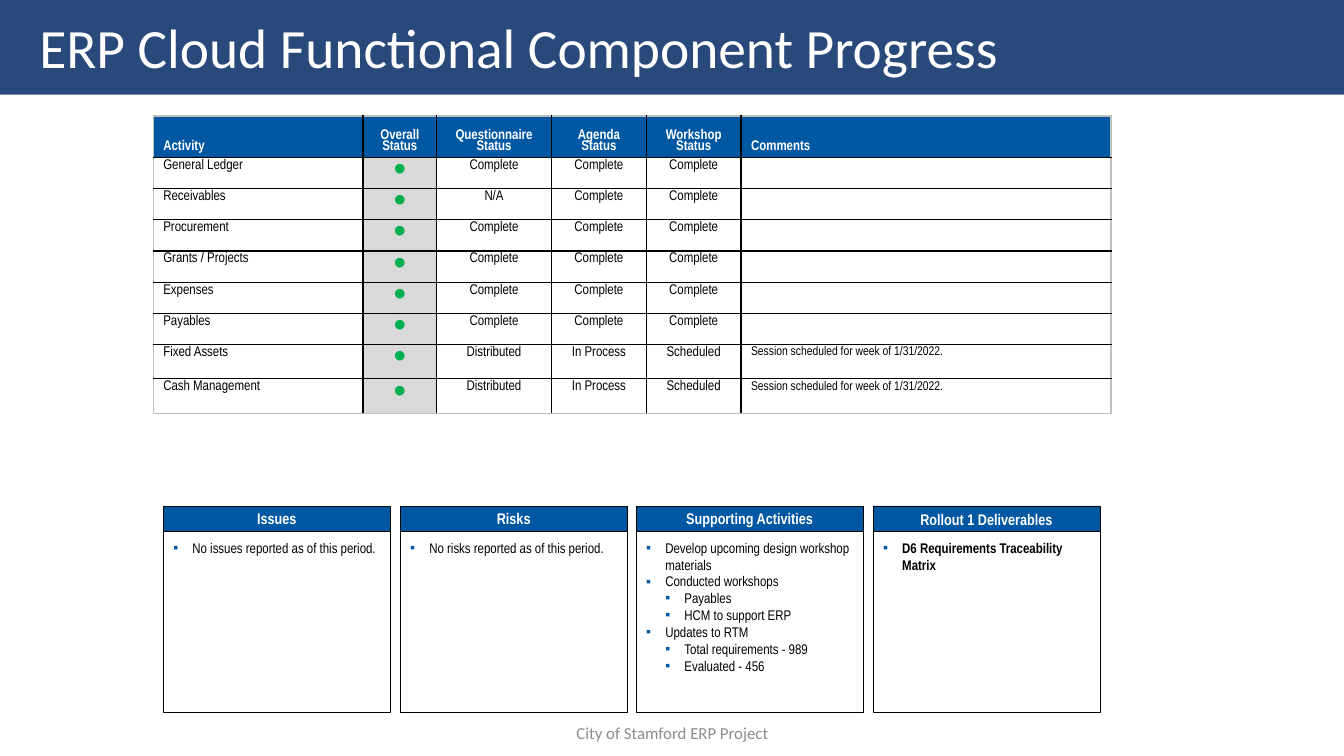
from lxml import etree
from pptx import Presentation
from pptx import util as u
from pptx.dml.color import RGBColor
from pptx.enum import shapes, text
from pptx.oxml import ns

PX = 9144
NAVY, BLUE, GREEN = "29497B", "0058A3", "00B050"
BLACK, WHITE, GREY, SILVER = "000000", "FFFFFF", "D9D9D9", "BFBFBF"
NARROW = "Arial Narrow"
LEFT, CENTER = text.PP_ALIGN.LEFT, text.PP_ALIGN.CENTER
TOP, MIDDLE, BOTTOM = text.MSO_ANCHOR.TOP, text.MSO_ANCHOR.MIDDLE, text.MSO_ANCHOR.BOTTOM

COLUMN_WIDTHS = [208, 73, 114, 94, 94, 367]
ROW_HEIGHTS = [41] + [31] * 6 + [34] * 2
HEADINGS = ["Activity", "Overall\nStatus", "Questionnaire\nStatus", "Agenda Status",
            "Workshop\nStatus", "Comments"]
DONE = ["Complete", "Complete", "Complete", ""]
PLANNED = ["Distributed", "In Process", "Scheduled", "Session scheduled for week of 1/31/2022."]
ACTIVITIES = [
    ["General Ledger", *DONE],
    ["Receivables", "N/A", *DONE[1:]],
    ["Procurement", *DONE],
    ["Grants / Projects", *DONE],
    ["Expenses", *DONE],
    ["Payables", *DONE],
    ["Fixed Assets", *PLANNED],
    ["Cash Management", *PLANNED],
]
PANELS = [
    ("Issues", 25, False, [(0, "No issues reported as of this period.")]),
    ("Risks", 25, False, [(0, "No risks reported as of this period.")]),
    ("Supporting Activities", 25, False, [
        (0, "Develop upcoming design workshop materials"),
        (0, "Conducted workshops"),
        (1, "Payables"),
        (1, "HCM to support ERP"),
        (0, "Updates to RTM"),
        (1, "Total requirements - 989"),
        (1, "Evaluated - 456"),
    ]),
    ("Rollout 1 Deliverables", 27, True, [(0, "D6 Requirements Traceability Matrix")]),
]


def px(*lengths):
    """Turn whole pixels into EMU."""
    return [u.Emu(length * PX) for length in lengths]


def color(value):
    """Turn a hex string into a colour."""
    return RGBColor.from_string(value)


def style(paragraph, size, fill, name=NARROW, bold=False, align=LEFT):
    """Set the font and alignment of a paragraph."""
    paragraph.alignment = align
    font = paragraph.font
    font.name, font.size, font.bold = name, u.Pt(size), bold
    font.color.rgb = color(fill)


def set_margins(target, horizontal, vertical):
    """Set the inner margins of a text frame or cell."""
    target.margin_left = target.margin_right = px(horizontal)[0]
    target.margin_top = target.margin_bottom = px(vertical)[0]


def add_box(slide, bounds, fill, line=None):
    """Add a flat rectangle."""
    shape = slide.shapes.add_shape(shapes.MSO_SHAPE.RECTANGLE, *px(*bounds))
    shape.shadow.inherit = False
    shape.fill.solid()
    shape.fill.fore_color.rgb = color(fill)
    if line:
        shape.line.color.rgb = color(line)
        shape.line.width = u.Pt(0.5)
    else:
        shape.line.fill.background()
    return shape


def add_title(slide, wording):
    """Place the title on its banner."""
    title = slide.shapes.title
    banner = add_box(slide, (0, 0, 1333, 94), NAVY)
    title.element.addprevious(banner.element)
    title.left, title.top, title.width, title.height = px(29, 22, 1150, 56)
    frame = title.text_frame
    frame.text = wording
    frame.auto_size = text.MSO_AUTO_SIZE.NONE
    frame.vertical_anchor = MIDDLE
    frame.paragraphs[0].line_spacing = 0.9
    style(frame.paragraphs[0], 39.6, WHITE, "Calibri")


def add_footer(slide, wording):
    """Add the centred footer line."""
    frame = slide.shapes.add_textbox(*px(442, 707, 450, 40)).text_frame
    frame.word_wrap = True
    frame.vertical_anchor = MIDDLE
    frame.text = wording
    style(frame.paragraphs[0], 12, "8C8C8C", "Calibri", align=CENTER)


def add_borders(cell, edges):
    """Draw the borders of a cell from a mapping of side to colour."""
    properties = cell._tc.get_or_add_tcPr()
    for side, value in edges.items():
        line = etree.SubElement(properties, ns.qn(f"a:ln{side}"), w=str(u.Pt(1)))
        fill = etree.SubElement(line, ns.qn("a:solidFill"))
        etree.SubElement(fill, ns.qn("a:srgbClr"), val=value)


def fill_cell(cell, wording, size, font_color, fill=None, bold=False, align=LEFT):
    """Write and format one table cell."""
    cell.text = wording
    set_margins(cell, 10, 2)
    for paragraph in cell.text_frame.paragraphs:
        style(paragraph, size, font_color, bold=bold, align=align)
        if not wording:
            paragraph._p.get_or_add_endParaRPr().set("sz", str(size * 100))
    if fill:
        cell.fill.solid()
        cell.fill.fore_color.rgb = color(fill)
    else:
        cell.fill.background()


def add_status_table(slide):
    """Add the table of activities and their status."""
    bounds = px(152, 115, sum(COLUMN_WIDTHS), sum(ROW_HEIGHTS))
    table = slide.shapes.add_table(len(ROW_HEIGHTS), len(COLUMN_WIDTHS), *bounds).table
    table.first_row = table.horz_banding = False
    for column, width in zip(table.columns, px(*COLUMN_WIDTHS)):
        column.width = width
    for row, height in zip(table.rows, px(*ROW_HEIGHTS)):
        row.height = height
    last_row, last_column = len(ROW_HEIGHTS) - 1, len(COLUMN_WIDTHS) - 1
    rows = [HEADINGS] + [[name, "●", *rest] for name, *rest in ACTIVITIES]
    for r, row in enumerate(rows):
        for c, wording in enumerate(row):
            cell = table.cell(r, c)
            outer = {"L": c == 0, "R": c == last_column, "T": r == 0, "B": r == last_row}
            add_borders(cell, {side: SILVER if edge else BLACK for side, edge in outer.items()})
            align = LEFT if c in (0, last_column) else CENTER
            if r == 0:
                fill_cell(cell, wording, 10, WHITE, BLUE, True, align)
                cell.vertical_anchor = BOTTOM
                cell.margin_bottom = px(5)[0]
                for paragraph in cell.text_frame.paragraphs:
                    paragraph.line_spacing = 0.8
            elif c == 1:
                fill_cell(cell, wording, 16, GREEN, GREY, align=align)
            else:
                fill_cell(cell, wording, 9 if c == last_column else 10, BLACK, align=align)


def add_bullet(paragraph, level):
    """Give a paragraph a small square bullet and a hanging indent."""
    paragraph.level = level
    properties = paragraph._p.get_or_add_pPr()
    properties.set("marL", str(19 * (level + 1) * PX))
    properties.set("indent", str(-19 * PX))
    bullet_color = etree.SubElement(properties, ns.qn("a:buClr"))
    etree.SubElement(bullet_color, ns.qn("a:srgbClr"), val=BLUE)
    etree.SubElement(properties, ns.qn("a:buFont"), typeface="Arial")
    etree.SubElement(properties, ns.qn("a:buChar"), char="▪")


def add_panel(slide, left, heading, heading_height, bold, items):
    """Add a headed box with a bulleted list."""
    header = add_box(slide, (left, 502, 225, heading_height), BLUE, BLACK).text_frame
    set_margins(header, 0, 0)
    header.vertical_anchor = MIDDLE
    header.text = heading
    style(header.paragraphs[0], 11, WHITE, bold=True, align=CENTER)
    body = add_box(slide, (left, 527, 225, 180), WHITE, BLACK).text_frame
    set_margins(body, 10, 8)
    body.word_wrap = True
    body.vertical_anchor = TOP
    body.text = "\n".join(wording for _, wording in items)
    for paragraph, (level, _) in zip(body.paragraphs, items):
        add_bullet(paragraph, level)
        style(paragraph, 10, BLACK, bold=bold)


def main():
    """Build the slide and save it."""
    presentation = Presentation()
    presentation.slide_width, presentation.slide_height = px(1333, 750)
    slide = presentation.slides.add_slide(presentation.slide_layouts[5])
    add_title(slide, "ERP Cloud Functional Component Progress")
    add_footer(slide, "City of Stamford ERP Project")
    add_status_table(slide)
    for index, panel in enumerate(PANELS):
        add_panel(slide, 162 + round(index * 234.6), *panel)
    presentation.save("out.pptx")


if __name__ == "__main__":
    main()
